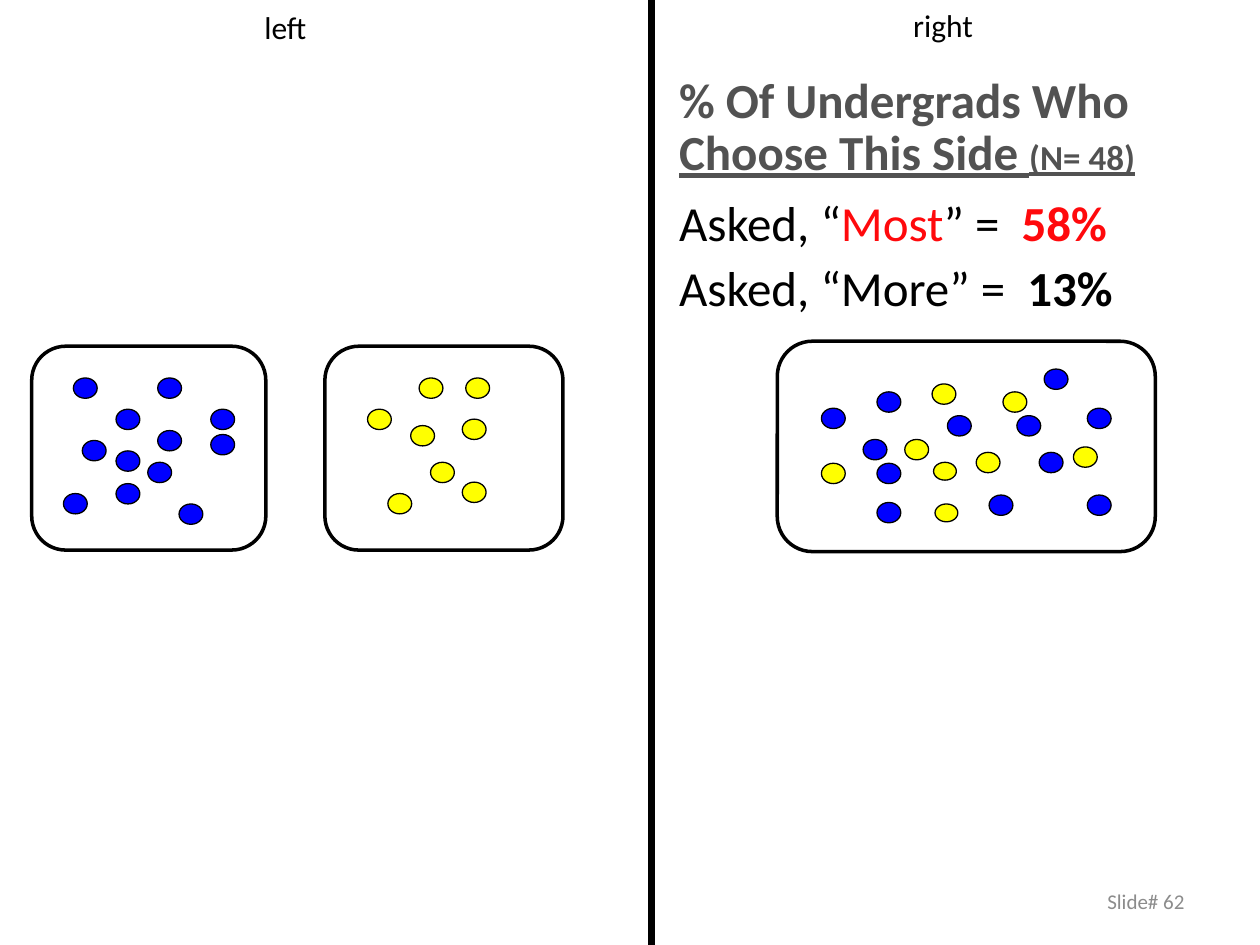
import pptx
import pptx.dml.color
import pptx.enum.shapes
import pptx.enum.text
import pptx.oxml.ns
import pptx.util
from lxml import etree
from pptx.util import Cm, Pt

BLACK, BLUE, YELLOW = "000000", "0000FF", "FFFF00"
RED, DARK_GREY, GREY = "FF090C", "525252", "8C8C8C"
DOT = (0.48, 0.41)
SMALL_DOT = (0.46, 0.36)
SHAPES = pptx.enum.shapes.MSO_SHAPE
ALIGN = pptx.enum.text.PP_ALIGN

LEFT_BLUE_DOTS = [
    (2.54, 1.7), (0.84, 0.64), (1.7, 2.11), (1.02, 1.9), (1.7, 1.27), (0.64, 2.97),
    (2.34, 2.34), (2.97, 3.18), (3.61, 1.27), (2.54, 0.64), (3.61, 1.78), (1.7, 2.77),
]
LEFT_YELLOW_DOTS = [
    (0.86, 1.27), (1.9, 0.64), (2.84, 0.64), (1.73, 1.6),
    (1.27, 2.97), (2.77, 2.74), (2.77, 1.47), (2.13, 2.34),
]
RIGHT_BLUE_DOTS = [
    (6.25, 3.1), (6.25, 1.35), (4.83, 1.5), (5.28, 2.24), (0.89, 1.35), (4.27, 3.1),
    (2.01, 2.46), (2.01, 3.25), (2.01, 1.02), (1.73, 1.98), (3.43, 1.5), (5.38, 0.56),
]
RIGHT_YELLOW_DOTS = [
    (3.12, 0.86), (4.01, 2.24), (4.55, 1.02), (0.89, 2.46), (5.97, 2.13), (2.57, 1.98),
]
RIGHT_SMALL_DOTS = [(3.15, 2.44), (3.18, 3.28)]


def rgb(hex_color):
    return pptx.dml.color.RGBColor.from_string(hex_color)


def style_font(font, size=None, color=None, bold=None, underline=None):
    font.name = "Calibri"
    if size:
        font.size = Pt(size)
    if color:
        font.color.rgb = rgb(color)
    font.bold = bold
    font.underline = underline


def add_outlined(slide, kind, box, line_width, fill=None):
    outlined = slide.shapes.add_shape(kind, *map(Cm, box))
    outlined.shadow.inherit = False
    if fill:
        outlined.fill.solid()
        outlined.fill.fore_color.rgb = rgb(fill)
    else:
        outlined.fill.background()
    outlined.line.color.rgb = rgb(BLACK)
    outlined.line.width = Pt(line_width)


def add_dot_panel(slide, box, *dot_groups):
    """Each dot group is (color, dot size, positions from the panel's corner)."""
    left, top = box[:2]
    for color, size, positions in dot_groups:
        for x, y in positions:
            add_outlined(slide, SHAPES.OVAL, (left + x, top + y, *size), 0.75, color)
    add_outlined(slide, SHAPES.ROUNDED_RECTANGLE, box, 2)


def add_label(slide, box, text, size=18, color=BLACK, align=ALIGN.LEFT, wrap=False,
              anchor=pptx.enum.text.MSO_ANCHOR.TOP):
    frame = slide.shapes.add_textbox(*map(Cm, box)).text_frame
    frame.word_wrap = wrap
    frame.vertical_anchor = anchor
    label = frame.paragraphs[0]
    label.text = text
    label.alignment = align
    style_font(label.font, size, color)


def add_divider(slide, x, height):
    divider = slide.shapes.add_connector(
        pptx.enum.shapes.MSO_CONNECTOR.STRAIGHT, Cm(x), Cm(0), Cm(x), Cm(height))
    divider.line.color.rgb = rgb(BLACK)
    divider.line.width = Pt(4)
    etree.SubElement(divider._element.spPr, pptx.oxml.ns.qn("a:effectLst"))


def add_results(slide, box):
    """Each line is its spacing and its runs: text, size, color, bold, underline."""
    lines = [
        (1.0, [("% Of Undergrads Who", 28, DARK_GREY, True, False)]),
        (0.9, [("Choose This Side ", 28, DARK_GREY, True, True),
               ("(N= 48)", 20, DARK_GREY, True, True)]),
        (1.2, [("Asked, “", 28, BLACK, False, False),
               ("Most", 28, RED, False, False),
               ("” =  ", 28, BLACK, False, False),
               ("58%", 28, RED, True, False)]),
        (1.1, [("Asked, “More” =  ", 28, BLACK, False, False),
               ("13%", 28, BLACK, True, False)]),
    ]
    frame = slide.shapes.add_textbox(*map(Cm, box)).text_frame
    frame.word_wrap = True
    for index, (spacing, runs) in enumerate(lines):
        line = frame.paragraphs[0] if index == 0 else frame.add_paragraph()
        line.line_spacing = spacing
        for text, *style in runs:
            run = line.add_run()
            run.text = text
            style_font(run.font, *style)


def main():
    deck = pptx.Presentation()
    deck.slide_width, deck.slide_height = Cm(25.4), Cm(19.05)
    slide = deck.slides.add_slide(deck.slide_layouts[6])

    add_label(slide, (18.21, 17.65, 5.92, 1.02), "Slide# 62", 12, GREY, ALIGN.RIGHT,
              True, pptx.enum.text.MSO_ANCHOR.MIDDLE)
    add_dot_panel(slide, (0.64, 6.98, 4.72, 4.11), (BLUE, DOT, LEFT_BLUE_DOTS))
    add_dot_panel(slide, (6.55, 6.98, 4.8, 4.11), (YELLOW, DOT, LEFT_YELLOW_DOTS))
    add_dot_panel(slide, (15.67, 6.88, 7.62, 4.24),
                  (BLUE, DOT, RIGHT_BLUE_DOTS),
                  (YELLOW, DOT, RIGHT_YELLOW_DOTS),
                  (YELLOW, SMALL_DOT, RIGHT_SMALL_DOTS))
    add_divider(slide, 13.13, 19.05)
    add_label(slide, (5.08, 0.03, 1.65, 1.27), "left")
    add_label(slide, (18.16, 0, 2.16, 1.27), "right")
    add_results(slide, (13.44, 1.27, 11.96, 5.23))

    deck.save("out.pptx")


if __name__ == "__main__":
    main()
